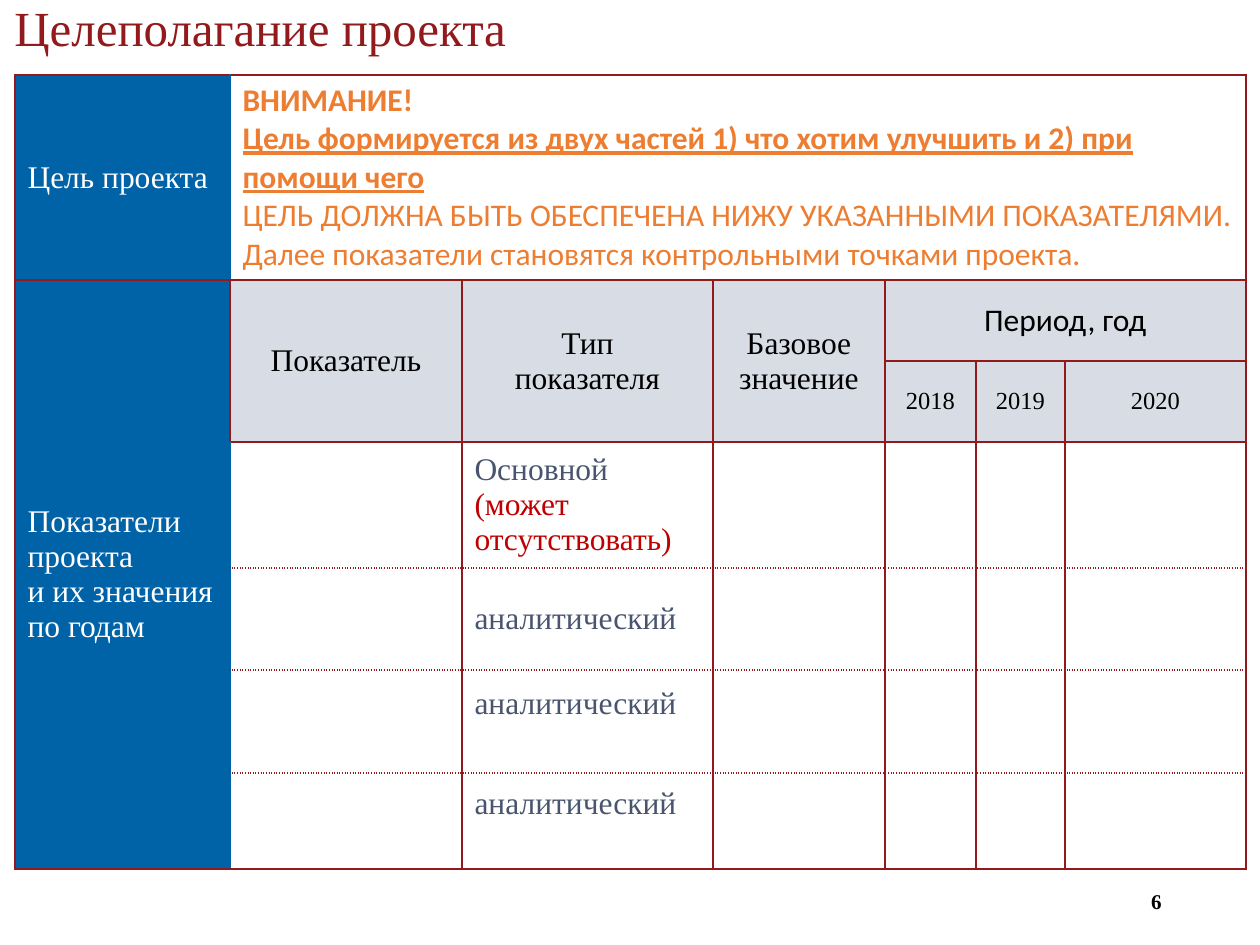
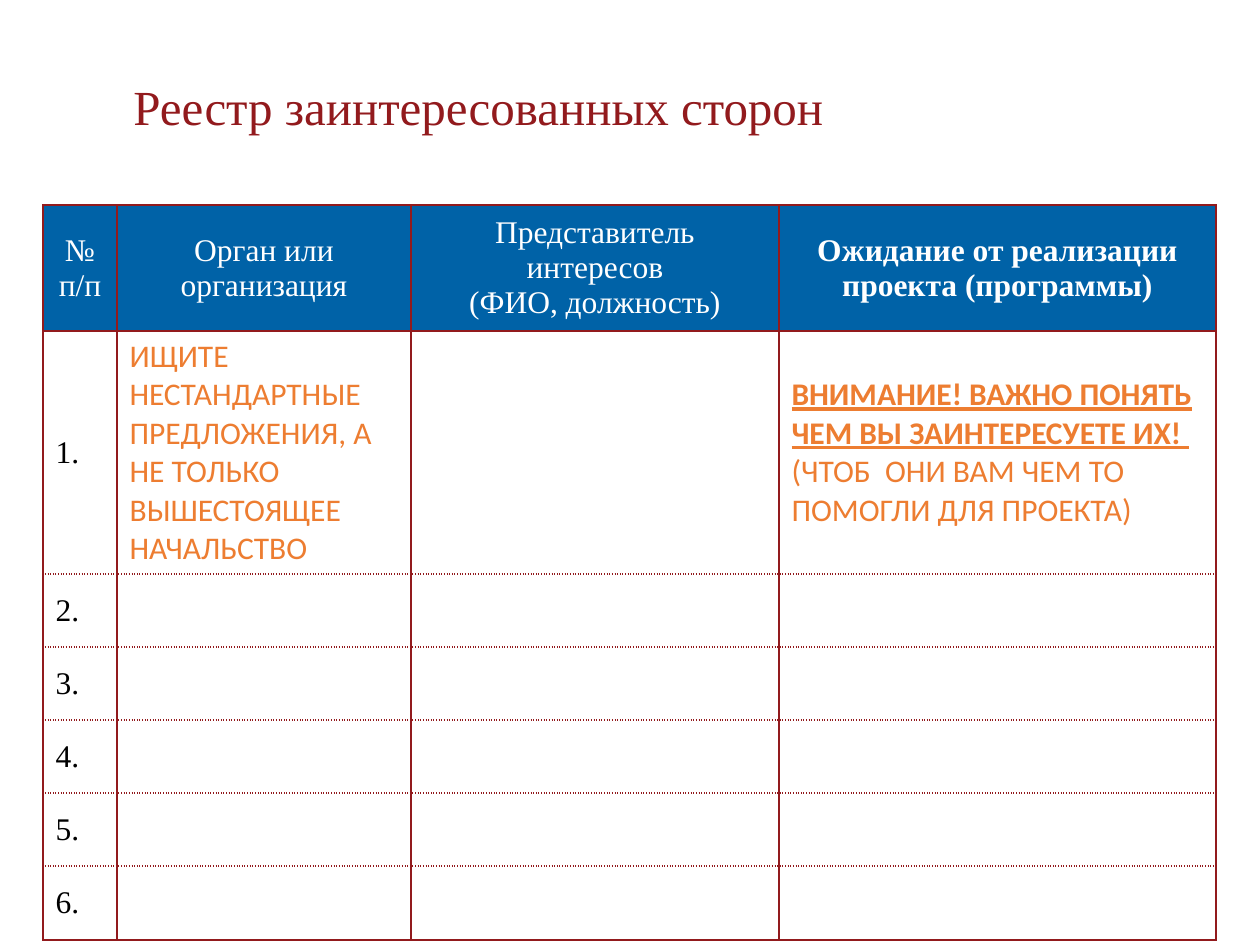
import pptx
import pptx.dml.color
import pptx.enum.text
import pptx.oxml.ns
import pptx.util
from lxml import etree

RGBColor = pptx.dml.color.RGBColor
Align = pptx.enum.text.PP_ALIGN
Anchor = pptx.enum.text.MSO_ANCHOR

EMU_PER_PX = 914400 / 126
SLIDE_SIZE = (1260, 945)

WINE = RGBColor(0x92, 0x1A, 0x1D)
BLUE = RGBColor(0x00, 0x62, 0xA7)
PALE_GREY = RGBColor(0xD8, 0xDC, 0xE5)
SLATE = RGBColor(0x49, 0x55, 0x6E)
RED = RGBColor(0xC0, 0x00, 0x00)
ORANGE = RGBColor(0xED, 0x7D, 0x31)
WHITE = RGBColor(0xFF, 0xFF, 0xFF)
BLACK = RGBColor(0x00, 0x00, 0x00)

# Text formats
BODY = {"name": "Times New Roman", "size": pptx.util.Pt(18), "color": BLACK}
TITLE = BODY | {"size": pptx.util.Pt(28), "color": WINE}
PAGE_NUMBER = BODY | {"size": pptx.util.Pt(12), "bold": True}
ON_BLUE = BODY | {"color": WHITE}
ON_BLUE_BOLD = ON_BLUE | {"bold": True}
YEAR = BODY | {"size": pptx.util.Pt(14)}
PERIOD = BODY | {"name": "Calibri"}
KIND = BODY | {"color": SLATE}
KIND_NOTE = BODY | {"color": RED}
HINT = PERIOD | {"color": ORANGE}
HINT_BOLD = HINT | {"bold": True}
HINT_KEY = HINT_BOLD | {"underline": True}


def px(length):
    return pptx.util.Emu(round(length * EMU_PER_PX))


def lines(style, *texts):
    """One paragraph of a single run for each text."""
    return [[(text, style)] for text in texts]


def format_run(run, style):
    for key, value in style.items():
        if key == "color":
            run.font.color.rgb = value
        else:
            setattr(run.font, key, value)


def write_text(frame, paragraphs, align=Align.LEFT, line_spacing=None):
    for index, runs in enumerate(paragraphs):
        paragraph = frame.add_paragraph() if index else frame.paragraphs[0]
        paragraph.alignment = align
        paragraph.line_spacing = line_spacing
        for text, style in runs:
            for number, part in enumerate(text.split("\n")):
                if number:
                    paragraph.add_line_break()
                run = paragraph.add_run()
                run.text = part
                format_run(run, style)


def add_text(slide, box, text, style, anchor=Anchor.MIDDLE, **layout):
    frame = slide.shapes.add_textbox(*map(px, box)).text_frame
    frame.word_wrap = True
    frame.vertical_anchor = anchor
    write_text(frame, lines(style, text), **layout)


def add_title(slide, box, text, anchor=Anchor.MIDDLE):
    add_text(slide, box, text, TITLE, anchor, line_spacing=0.9)


def add_borders(cell, borders):
    """Draw the sides, given as (tag, colour, dash) in schema order."""
    properties = cell._tc.get_or_add_tcPr()
    for index, (tag, color, dash) in enumerate(borders):
        line = etree.Element(pptx.oxml.ns.qn(f"a:{tag}"), w="12700")
        fill = etree.SubElement(line, pptx.oxml.ns.qn("a:solidFill"))
        etree.SubElement(fill, pptx.oxml.ns.qn("a:srgbClr"), val=str(color))
        etree.SubElement(line, pptx.oxml.ns.qn("a:prstDash"), val=dash)
        properties.insert(index, line)


def add_grid(slide, corner, widths, heights, header_rows, fill_at,
             blue_edge_rows=()):
    """Table with solid header rules and dotted rules between body rows."""
    size = (sum(widths), sum(heights))
    frame = slide.shapes.add_table(len(heights), len(widths),
                                   *map(px, corner + size))
    table = frame.table
    table.first_row = table.horz_banding = False
    for column, width in zip(table.columns, widths):
        column.width = px(width)
    for row, height in zip(table.rows, heights):
        row.height = px(height)

    def side_color(row, edge):
        return BLUE if edge == 1 and row in blue_edge_rows else WINE

    def rule_dash(edge):
        return "sysDot" if header_rows < edge < len(heights) else "solid"

    for row in range(len(heights)):
        for column in range(len(widths)):
            cell = table.cell(row, column)
            cell.fill.solid()
            cell.fill.fore_color.rgb = fill_at(row, column)
            cell.vertical_anchor = Anchor.MIDDLE
            add_borders(cell, [
                ("lnL", side_color(row, column), "solid"),
                ("lnR", side_color(row, column + 1), "solid"),
                ("lnT", WINE, rule_dash(row)),
                ("lnB", WINE, rule_dash(row + 1)),
            ])
    return table


def fill_cell(table, row, column, paragraphs, align=Align.LEFT):
    write_text(table.cell(row, column).text_frame, paragraphs, align)


def add_goal_slide(slide):
    add_text(slide, (891, 876, 283, 50), "6", PAGE_NUMBER, align=Align.RIGHT)

    def fill_at(row, column):
        if column == 0:
            return BLUE
        return PALE_GREY if row in (1, 2) else WHITE

    table = add_grid(slide, (15, 75), (215, 232, 251, 172, 91, 89, 181),
                     (205, 81, 81, 117, 102, 103, 96), 3, fill_at,
                     blue_edge_rows=(0, 3, 4, 5, 6))
    spans = [((0, 1), (0, 6)), ((1, 0), (6, 0)), ((1, 4), (1, 6))]
    spans += [((1, column), (2, column)) for column in (1, 2, 3)]
    for first, last in spans:
        table.cell(*first).merge(table.cell(*last))

    # Row labels and the goal
    fill_cell(table, 0, 0, lines(ON_BLUE, "Цель проекта"))
    fill_cell(table, 1, 0, lines(ON_BLUE, "Показатели", "проекта",
                                 "и их значения", "по годам"))
    table.cell(0, 1).vertical_anchor = Anchor.TOP
    fill_cell(table, 0, 1, [
        *lines(HINT_BOLD, "ВНИМАНИЕ!"),
        *lines(HINT_KEY, "Цель формируется из двух частей 1) что хотим "
                         "улучшить и 2) при помощи чего"),
        *lines(HINT, "ЦЕЛЬ ДОЛЖНА БЫТЬ ОБЕСПЕЧЕНА НИЖУ УКАЗАННЫМИ "
                     "ПОКАЗАТЕЛЯМИ.",
               "Далее показатели становятся контрольными точками проекта."),
    ])

    # Column headings
    headings = [("Показатель",), ("Тип", "показателя"),
                ("Базовое", "значение")]
    for column, texts in enumerate(headings, 1):
        fill_cell(table, 1, column, lines(BODY, *texts), Align.CENTER)
    fill_cell(table, 1, 4, lines(PERIOD, "Период, год"), Align.CENTER)
    for column, year in enumerate(("2018", "2019", "2020"), 4):
        fill_cell(table, 2, column, lines(YEAR, year), Align.CENTER)

    # Kinds of indicator; the last two sit above the middle of their rows
    fill_cell(table, 3, 2, [[("Основной ", KIND),
                             ("(может отсутствовать)", KIND_NOTE)]])
    for row in (4, 5, 6):
        fill_cell(table, row, 2, lines(KIND, "аналитический"))
    for row in (5, 6):
        table.cell(row, 2).margin_bottom = px(41)

    add_title(slide, (2, 6, 932, 49), "Целеполагание проекта")


def add_stakeholder_slide(slide):
    add_title(slide, (121, 15, 935, 127), "Реестр заинтересованных сторон",
              Anchor.BOTTOM)
    table = add_grid(slide, (43, 205), (74, 294, 368, 437),
                     (117, 243) + (73,) * 4 + (74,), 1,
                     lambda row, column: WHITE if row else BLUE)

    # Column headings
    headings = [
        lines(ON_BLUE, "№", "п/п"),
        lines(ON_BLUE, "Орган или организация"),
        lines(ON_BLUE, "Представитель интересов\n(ФИО, должность)"),
        lines(ON_BLUE_BOLD, "Ожидание от реализации проекта (программы)"),
    ]
    for column, heading in enumerate(headings):
        fill_cell(table, 0, column, heading, Align.CENTER)

    # Row numbers and hints
    for row in range(1, 7):
        fill_cell(table, row, 0, lines(BODY, f"{row}."))
    fill_cell(table, 1, 1, lines(HINT, "ИЩИТЕ НЕСТАНДАРТНЫЕ ПРЕДЛОЖЕНИЯ, А "
                                       "НЕ ТОЛЬКО ВЫШЕСТОЯЩЕЕ НАЧАЛЬСТВО"))
    fill_cell(table, 1, 3, [
        *lines(HINT_KEY, "ВНИМАНИЕ! ВАЖНО ПОНЯТЬ ЧЕМ ВЫ ЗАИНТЕРЕСУЕТЕ ИХ! "),
        *lines(HINT, "(ЧТОБ  ОНИ ВАМ ЧЕМ ТО ПОМОГЛИ ДЛЯ ПРОЕКТА)"),
    ])


def main():
    presentation = pptx.Presentation()
    presentation.slide_width, presentation.slide_height = map(px, SLIDE_SIZE)
    blank = presentation.slide_layouts[6]
    for build in (add_goal_slide, add_stakeholder_slide):
        build(presentation.slides.add_slide(blank))
    presentation.save("out.pptx")


if __name__ == "__main__":
    main()
